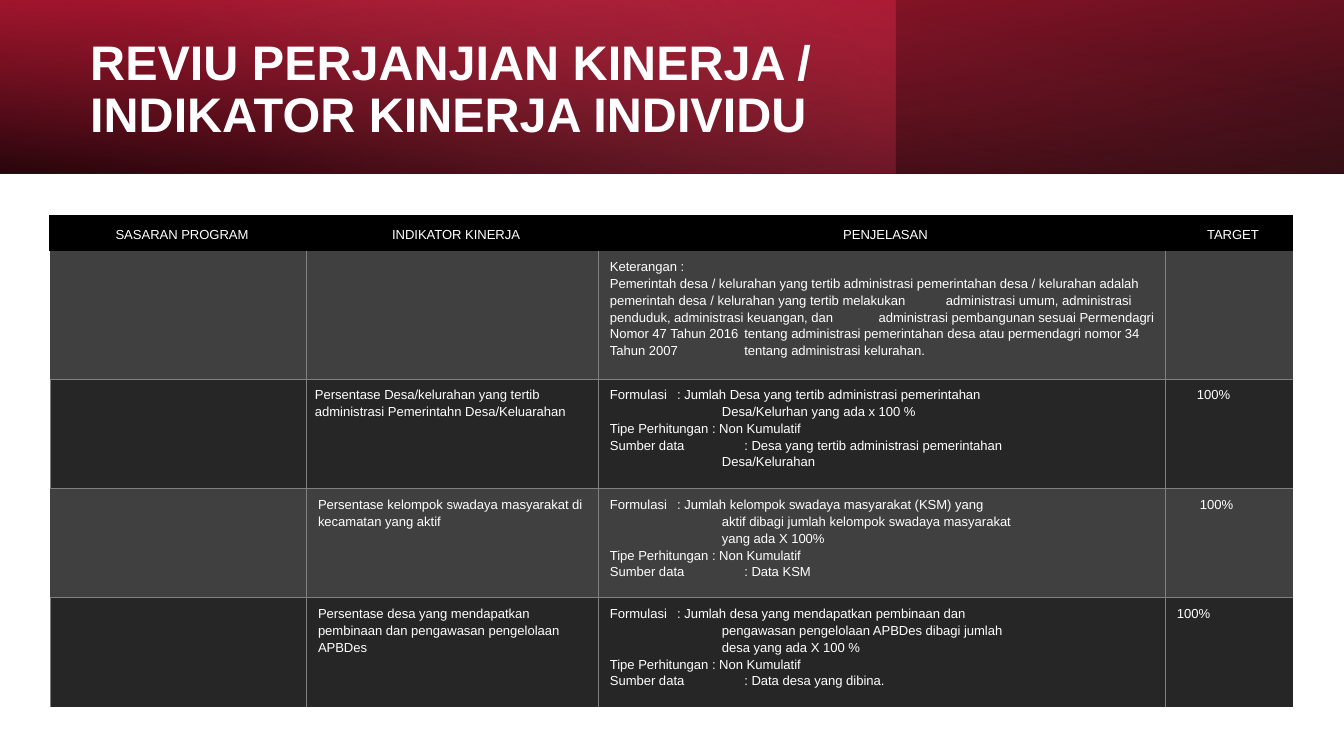
from copy import deepcopy
from dataclasses import dataclass

from lxml import etree
from pptx import Presentation
from pptx.dml.color import RGBColor
from pptx.enum.shapes import MSO_SHAPE
from pptx.enum.text import MSO_ANCHOR, PP_ALIGN
from pptx.oxml.ns import qn
from pptx.util import Pt

RECTANGLE = MSO_SHAPE.RECTANGLE
MIDDLE, TOP = MSO_ANCHOR.MIDDLE, MSO_ANCHOR.TOP
LEFT, CENTER = PP_ALIGN.LEFT, PP_ALIGN.CENTER
SCALE = 914400 / 134.4
WHITE, BLACK, GRAY = "FFFFFF", "000000", "808080"
BAND_FILLS = ("404040", "262626")
NO_STYLE = "{2D5ABB26-0587-4C30-8999-92F81FD0307C}"
COLUMN_WIDTHS = (256, 292, 567, 128)
ROW_HEIGHTS = (35, 128, 110, 109, 109)
COLON, CONTINUED = 104, 112


@dataclass
class Stop:
    position: int
    color: str
    alpha: int


@dataclass
class Panel:
    width: int
    angle: int
    stops: tuple[Stop, ...]
    rotation: int = 0
    flipped: bool = False


@dataclass
class Line:
    text: str
    indent: int = 0
    tabs: tuple[int, ...] = ()


PANELS = (
    Panel(1344, 100, (Stop(0, BLACK, 96), Stop(100, "B61530", 100)), 180, True),
    Panel(896, 140, (Stop(0, "E62949", 41), Stop(74, "F07F92", 0))),
    Panel(1344, 260, (Stop(0, BLACK, 63), Stop(78, "E62949", 15)), flipped=True),
)
HEADINGS = ("SASARAN PROGRAM", "INDIKATOR KINERJA", "PENJELASAN", "TARGET")
EXPLANATION = (
    "Pemerintah desa / kelurahan yang tertib administrasi pemerintahan desa / kelurahan adalah "
    "pemerintah desa / kelurahan yang tertib melakukan\tadministrasi umum, administrasi "
    "penduduk, administrasi keuangan, dan\tadministrasi pembangunan sesuai Permendagri Nomor "
    "47 Tahun 2016\ttentang administrasi pemerintahan desa atau permendagri nomor 34\v"
    "Tahun 2007\ttentang administrasi kelurahan."
)


def px(length: int) -> int:
    """Turn pixels into EMU."""
    return round(length * SCALE)


def rgb(value: str) -> RGBColor:
    """Turn a hex string into a colour."""
    return RGBColor.from_string(value)


def add_panel(page, panel: Panel) -> None:
    """Draw one translucent gradient layer of the banner."""
    box = page.shapes.add_shape(RECTANGLE, 0, 0, px(panel.width), px(174))
    box.shadow.inherit = False
    box.line.fill.background()
    box.rotation = panel.rotation
    box.fill.background()
    properties = box.element.spPr
    if panel.flipped:
        properties.find(qn("a:xfrm")).set("flipH", "1")
    gradient = etree.Element(qn("a:gradFill"), rotWithShape="1")
    stop_list = etree.SubElement(gradient, qn("a:gsLst"))
    for stop in panel.stops:
        node = etree.SubElement(stop_list, qn("a:gs"), pos=str(stop.position * 1000))
        color = etree.SubElement(node, qn("a:srgbClr"), val=stop.color)
        etree.SubElement(color, qn("a:alpha"), val=str(stop.alpha * 1000))
    etree.SubElement(gradient, qn("a:lin"), ang=str(panel.angle * 60000), scaled="0")
    properties.replace(properties.find(qn("a:noFill")), gradient)


def write(para, line: Line, *, size: int = 7, bold: bool = False,
          align=LEFT, spacing: float = 1.15) -> None:
    """Fill a paragraph with one formatted line of text."""
    para.text = line.text
    para.alignment = align
    para.line_spacing = spacing
    for span in para.runs:
        span.font.size = Pt(size)
        span.font.name = "Arial"
        span.font.bold = bold
        span.font.color.rgb = rgb(WHITE)
    element = para.runs[0].font._element
    for line_break in para._p.findall(qn("a:br")):
        line_break.insert(0, deepcopy(element))
    properties = para._p.get_or_add_pPr()
    properties.set("marL", str(px(line.indent)))
    properties.set("indent", "0")
    if line.tabs:
        tab_list = etree.SubElement(properties, qn("a:tabLst"))
        for tab in line.tabs:
            etree.SubElement(tab_list, qn("a:tab"), pos=str(px(tab)), algn="l")


def add_title(page, text: str) -> None:
    """Write the banner title."""
    box = page.shapes.add_textbox(px(77), px(27), px(778), px(128))
    box.text_frame.word_wrap = True
    box.text_frame.vertical_anchor = MIDDLE
    write(box.text_frame.paragraphs[0], Line(text), size=26, bold=True, spacing=0.9)


def add_border(cell, side: str, color: str, width: float) -> None:
    """Put a solid border on one side of a cell."""
    properties = cell._tc.get_or_add_tcPr()
    border = etree.Element(qn(f"a:ln{side}"), w=str(Pt(width)))
    fill = etree.SubElement(border, qn("a:solidFill"))
    etree.SubElement(fill, qn("a:srgbClr"), val=color)
    properties.insert(len(properties.findall("*")) - 1, border)


def body_sides(row: int, column: int) -> str:
    """Name the bordered sides of a body cell in schema order."""
    dark = row % 2 == 0
    left = "L" if column or dark else ""
    right = "R" if column < len(COLUMN_WIDTHS) - 1 else ""
    return left + right + ("T" if dark else "B")


def fill_cell(cell, row: int, column: int, lines: list[Line]) -> None:
    """Colour, border and fill one table cell."""
    header = row == 0
    cell.fill.solid()
    cell.fill.fore_color.rgb = rgb(BLACK if header else BAND_FILLS[(row - 1) % 2])
    sides = ("T" if column else "LT") if header else body_sides(row, column)
    for side in sides:
        add_border(cell, side, BLACK if header else GRAY, 1.5 if header else 0.5)
    cell.margin_left = px(12 if column == 2 and not header else 9)
    cell.margin_right = px(1 if row < 2 else 5)
    cell.margin_top = cell.margin_bottom = px(7)
    cell.vertical_anchor = MIDDLE if header else TOP
    frame = cell.text_frame
    for index, line in enumerate(lines):
        para = frame.add_paragraph() if index else frame.paragraphs[0]
        write(para, line, align=CENTER if header else LEFT)


def details(formula: tuple[str, ...], source: tuple[str, ...]) -> list[Line]:
    """Lay out the formula, calculation type and data source of an indicator."""
    def entry(label: str, parts: tuple[str, ...]) -> list[Line]:
        """Lay out a label, its value and the value's continuation."""
        first = Line(f"{label}\t: {parts[0]}", tabs=(COLON,))
        return [first] + [Line(part, CONTINUED) for part in parts[1:]]

    kind = Line("Tipe Perhitungan : Non Kumulatif")
    return entry("Formulasi", formula) + [kind] + entry("Sumber data", source)


def add_indicator_table(page, rows: list[list[list[Line]]]) -> None:
    """Draw the performance indicator table."""
    graphic = page.shapes.add_table(len(ROW_HEIGHTS), len(COLUMN_WIDTHS), px(50), px(216),
                                    px(sum(COLUMN_WIDTHS)), px(sum(ROW_HEIGHTS)))
    table = graphic.table
    table.horz_banding = False
    next(graphic.element.iter(qn("a:tableStyleId"))).text = NO_STYLE
    for column, width in zip(table.columns, COLUMN_WIDTHS):
        column.width = px(width)
    for row, height in zip(table.rows, ROW_HEIGHTS):
        row.height = px(height)
    for row, cells in enumerate(rows):
        for column, lines in enumerate(cells):
            fill_cell(table.cell(row, column), row, column, lines)


def main() -> None:
    """Build and save the slide."""
    deck = Presentation()
    deck.slide_width, deck.slide_height = px(1344), px(756)
    page = deck.slides.add_slide(deck.slide_layouts[6])
    for panel in PANELS:
        add_panel(page, panel)
    add_title(page, "REVIU PERJANJIAN KINERJA / \vINDIKATOR KINERJA INDIVIDU")
    add_indicator_table(page, [
        [[Line(heading)] for heading in HEADINGS],
        [[], [], [Line("Keterangan :"), Line(EXPLANATION, tabs=(75, 104, 234, 321))], []],
        [[], [Line("Persentase Desa/kelurahan yang tertib administrasi Pemerintahn Desa/Keluarahan")],
         details(("Jumlah Desa yang tertib administrasi pemerintahan", "Desa/Kelurhan yang ada x 100 %"),
                 ("Desa yang tertib administrasi pemerintahan", "Desa/Kelurahan")), [Line("100%", 23)]],
        [[], [Line("Persentase kelompok swadaya masyarakat di kecamatan yang aktif", 3)],
         details(("Jumlah kelompok swadaya masyarakat (KSM) yang", "aktif dibagi jumlah kelompok swadaya masyarakat",
                  "yang ada X 100%"), ("Data KSM",)), [Line("100%", 26)]],
        [[], [Line("Persentase desa yang mendapatkan pembinaan dan pengawasan pengelolaan APBDes", 3)],
         details(("Jumlah desa yang mendapatkan pembinaan dan", "pengawasan pengelolaan APBDes dibagi jumlah",
                  "desa yang ada X 100 %"), ("Data desa yang dibina.",)), [Line("100%", 3)]],
    ])
    deck.save("out.pptx")


if __name__ == "__main__":
    main()
